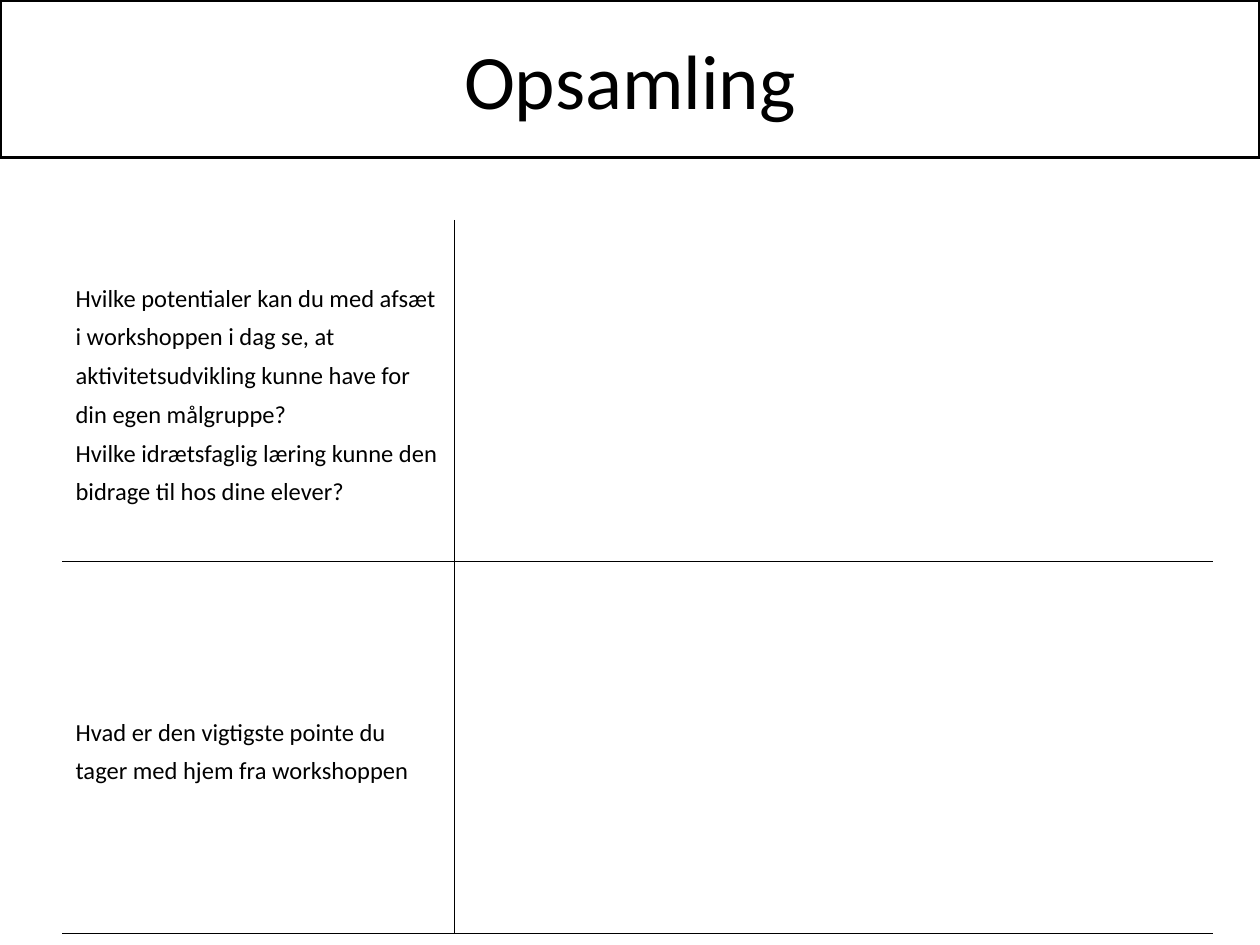
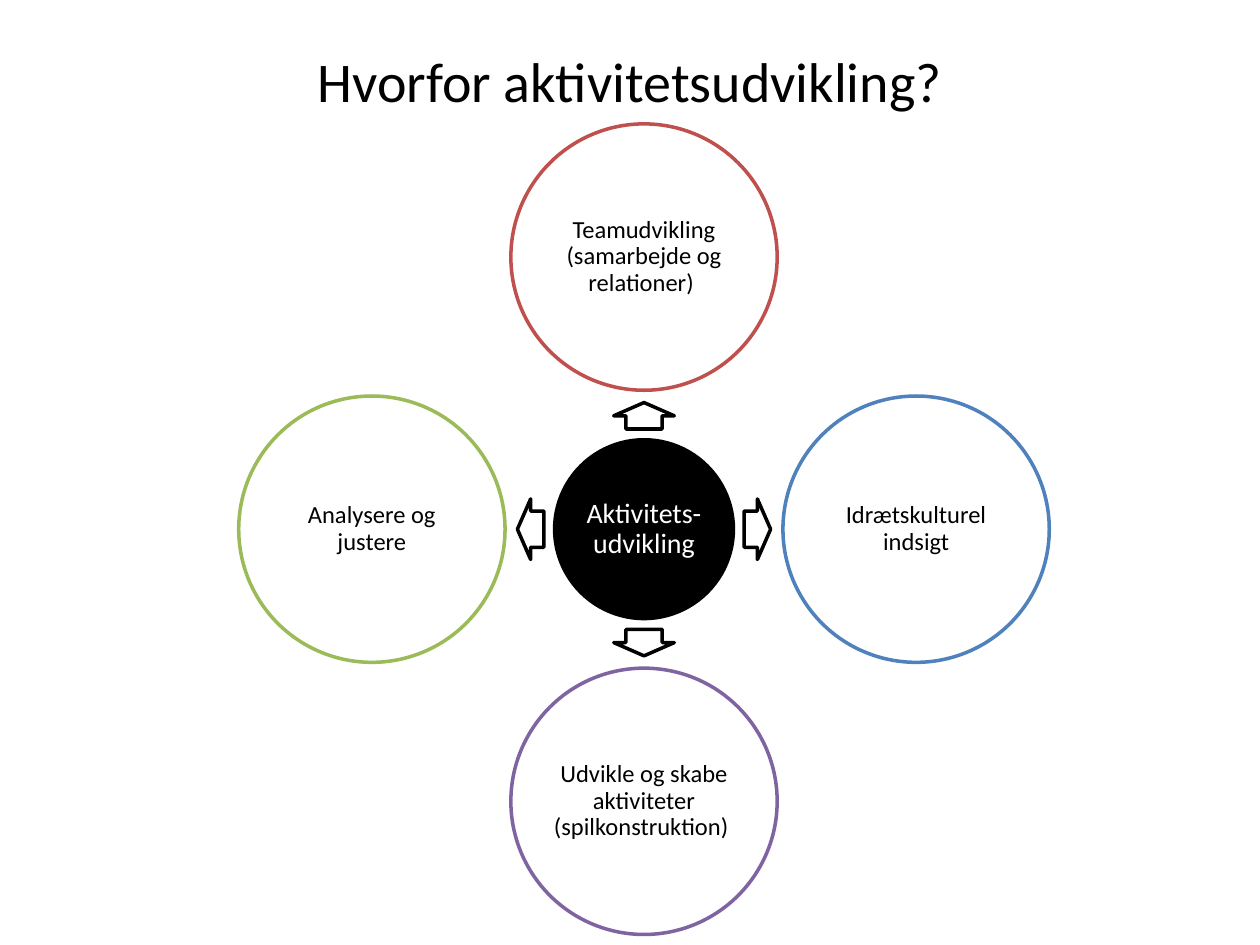
"""Build two workshop slides: a summary table and a wheel of reasons."""
import math
from dataclasses import dataclass

import pptx
import pptx.dml.color
import pptx.enum.shapes
import pptx.enum.text
import pptx.oxml
import pptx.oxml.ns
import pptx.util

Pt = pptx.util.Pt
Shape = pptx.enum.shapes.MSO_SHAPE
Align = pptx.enum.text.PP_ALIGN
Anchor = pptx.enum.text.MSO_ANCHOR


@dataclass(frozen=True)
class Theme:
    font: str = "Calibri"
    black: str = "000000"
    white: str = "FFFFFF"
    red: str = "C0504D"
    blue: str = "4F81BD"
    violet: str = "8064A2"
    green: str = "9BBB59"
    banner: int = 44
    title: int = 32
    hub: int = 16
    body: int = 14
    line: int = 2
    rule: int = 1


theme = Theme()

SUMMARY = "Opsamling"
ROWS = [
    (195, ["Hvilke potentialer kan du med afsæt i workshoppen i dag se, at "
           "aktivitetsudvikling kunne have for din egen målgruppe?",
           "Hvilke idrætsfaglig læring kunne den bidrage til hos dine elever?"]),
    (212.5, ["Hvad er den vigtigste pointe du tager med hjem fra workshoppen"]),
]
COLS = [223.6, 433.1]
TABLE = (36, 126)

REASONS = "Hvorfor aktivitetsudvikling?"
HUB = "Aktivitets-udvikling"
SPOKES = [
    (270, theme.red, "Teamudvikling (samarbejde og relationer) "),
    (0, theme.blue, "Idrætskulturel indsigt"),
    (90, theme.violet, "Udvikle og skabe aktiviteter (spilkonstruktion) "),
    (180, theme.green, "Analysere og justere"),
]
CENTER = (368, 302.4)
HUB_SIZE, SPOKE_SIZE = 102.2, 152.2
ARROW = (15.1, 34.6)
ARROW_REACH, SPOKE_REACH = 64.8, 155.5


def rgb(code):
    return pptx.dml.color.RGBColor.from_string(code)


def write(frame, texts, size, color, align, space=1.0):
    for i, text in enumerate(texts):
        para = frame.add_paragraph() if i else frame.paragraphs[0]
        para.alignment, para.line_spacing = align, space
        run = para.add_run()
        run.text = text
        run.font.name, run.font.size = theme.font, Pt(size)
        run.font.color.rgb = rgb(color)


def paint(shape, fill, line):
    shape.fill.solid()
    shape.fill.fore_color.rgb = rgb(fill)
    shape.line.color.rgb = rgb(line)
    shape.line.width = Pt(theme.line)


def start(deck, text, size, box):
    slide = deck.slides.add_slide(deck.slide_layouts[5])
    title = slide.shapes.title
    title.left, title.top, title.width, title.height = map(Pt, box)
    frame = title.text_frame
    frame.auto_size = pptx.enum.text.MSO_AUTO_SIZE.NONE
    frame.vertical_anchor = Anchor.MIDDLE
    write(frame, [text], size, theme.black, Align.CENTER)
    return slide


def edge(cell, sides):
    props = cell._tc.get_or_add_tcPr()
    for side in sides:
        props.append(pptx.oxml.parse_xml(
            f'<a:ln{side} {pptx.oxml.ns.nsdecls("a")} w="{Pt(theme.rule)}">'
            f'<a:solidFill><a:srgbClr val="{theme.black}"/></a:solidFill>'
            f'</a:ln{side}>'))


def summary(deck):
    slide = start(deck, SUMMARY, theme.banner, (0, 0, 720, 90))
    paint(slide.shapes.title, theme.white, theme.black)
    high = sum(height for height, _ in ROWS)
    spot = map(Pt, (*TABLE, sum(COLS), high))
    table = slide.shapes.add_table(len(ROWS), len(COLS), *spot).table
    table.first_row = table.horz_banding = False
    for col, width in zip(table.columns, COLS):
        col.width = Pt(width)
    for r, (height, texts) in enumerate(ROWS):
        table.rows[r].height = Pt(height)
        for c in range(len(COLS)):
            cell = table.cell(r, c)
            edge(cell, ("L" if c else "R") + ("T" if r else "") + "B")
            cell.fill.solid()
            cell.fill.fore_color.rgb = rgb(theme.white)
            cell.vertical_anchor = Anchor.MIDDLE
        write(table.cell(r, 0).text_frame, texts, theme.body,
              theme.black, Align.LEFT, 1.3)


def place(slide, kind, angle, reach, wide, high, fill, line):
    turn = math.radians(angle)
    x = CENTER[0] + reach * math.cos(turn) - wide / 2
    y = CENTER[1] + reach * math.sin(turn) - high / 2
    shape = slide.shapes.add_shape(kind, Pt(x), Pt(y), Pt(wide), Pt(high))
    shape.shadow.inherit = False
    paint(shape, fill, line)
    return shape


def disc(slide, angle, reach, size, fill, line, text, points, color):
    shape = place(slide, Shape.OVAL, angle, reach, size, size, fill, line)
    frame = shape.text_frame
    frame.word_wrap, frame.vertical_anchor = True, Anchor.MIDDLE
    frame.margin_left = frame.margin_right = Pt(1.4)
    frame.margin_top = frame.margin_bottom = Pt(1.4)
    write(frame, [text], points, color, Align.CENTER, 0.9)


def reasons(deck):
    slide = start(deck, REASONS, theme.title, (36, 0.7, 648, 90))
    disc(slide, 0, 0, HUB_SIZE, theme.black, theme.black,
         HUB, theme.hub, theme.white)
    for angle, color, text in SPOKES:
        arrow = place(slide, Shape.RIGHT_ARROW, angle, ARROW_REACH, *ARROW,
                      theme.white, theme.black)
        arrow.rotation = angle
        arrow.adjustments[0], arrow.adjustments[1] = 0.6, 0.5
        disc(slide, angle, SPOKE_REACH, SPOKE_SIZE, theme.white, color,
             text, theme.body, theme.black)


def main():
    deck = pptx.Presentation()
    deck.slide_width, deck.slide_height = Pt(720), Pt(540)
    summary(deck)
    reasons(deck)
    deck.save("out.pptx")


if __name__ == "__main__":
    main()
